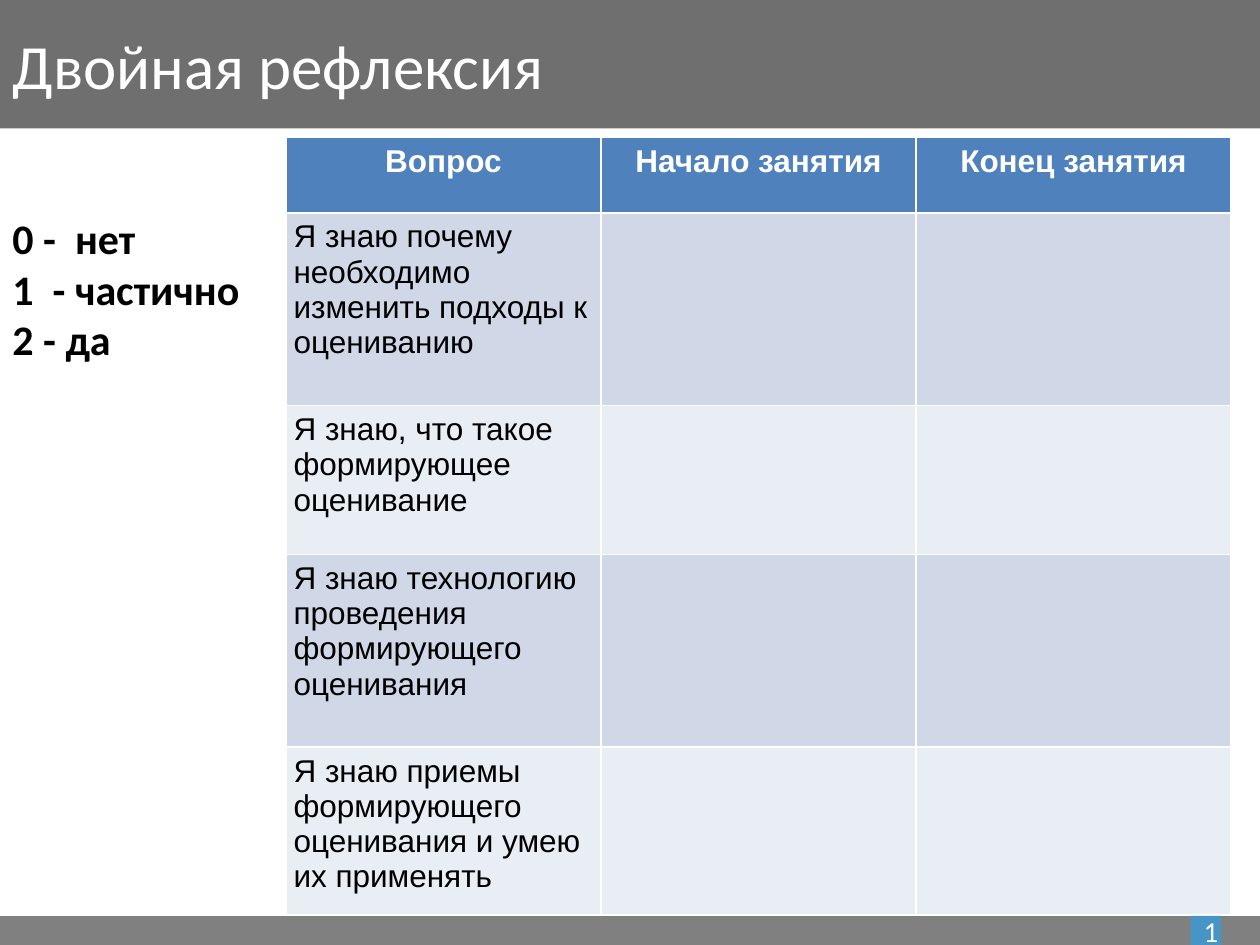
from pptx import Presentation
from pptx.dml.color import RGBColor
from pptx.enum import shapes, text
from pptx.util import Inches, Pt

COLORS = {
    "white": "FFFFFF",
    "black": "000000",
    "title": "6F6F6F",
    "footer": "808080",
    "number": "4695C6",
    "header": "4F81BD",
    "band_dark": "D0D8E8",
    "band_light": "E9EDF4",
}
HEADERS = ["Вопрос", "Начало занятия", "Конец занятия"]
QUESTIONS = [
    "Я знаю почему необходимо изменить подходы к оцениванию",
    "Я знаю, что такое формирующее оценивание",
    "Я знаю технологию проведения формирующего оценивания",
    "Я знаю приемы формирующего оценивания и умею их применять",
]
ROW_HEIGHTS = [0.6, 1.53, 1.18, 1.53, 1.33]
SCALE = ["0 -  нет", "1  - частично", "2 - да"]


def rgb(name):
    return RGBColor.from_string(COLORS[name])


def paint(target, color):
    target.fill.solid()
    target.fill.fore_color.rgb = rgb(color)


def add_run(p, content, size, color, font="Calibri", bold=False):
    r = p.add_run()
    r.text = content
    r.font.name = font
    r.font.size = Pt(size)
    r.font.bold = bold
    r.font.color.rgb = rgb(color)


def set_title(s, content):
    sp = s.shapes.title
    sp.left, sp.top, sp.width, sp.height = Inches(0), Inches(0), Inches(10), Inches(1.02)
    paint(sp, "title")
    tf = sp.text_frame
    tf.auto_size = text.MSO_AUTO_SIZE.NONE
    tf.vertical_anchor = text.MSO_ANCHOR.MIDDLE
    p = tf.paragraphs[0]
    p.alignment = text.PP_ALIGN.LEFT
    add_run(p, content, 36, "white")


def add_bar(s, left, top, width, height, color):
    sp = s.shapes.add_shape(shapes.MSO_SHAPE.RECTANGLE, Inches(left), Inches(top),
                            Inches(width), Inches(height))
    sp.shadow.inherit = False
    sp.line.fill.background()
    paint(sp, color)
    return sp


def add_page_number(s, number):
    tf = add_bar(s, 9.45, 7.27, 0.24, 0.24, "number").text_frame
    tf.margin_left = Inches(0.08)
    tf.margin_right = tf.margin_top = tf.margin_bottom = 0
    tf.word_wrap = False
    tf.vertical_anchor = text.MSO_ANCHOR.MIDDLE
    p = tf.paragraphs[0]
    p.alignment = text.PP_ALIGN.CENTER
    add_run(p, number, 16.5, "white")


def format_cell(cell, color):
    paint(cell, color)
    cell.margin_left = cell.margin_right = Inches(0.06)
    cell.margin_top = cell.margin_bottom = Inches(0.05)


def add_question_table(s):
    table = s.shapes.add_table(len(ROW_HEIGHTS), len(HEADERS), Inches(2.27), Inches(1.09),
                               Inches(7.5), Inches(sum(ROW_HEIGHTS))).table
    for row, height in zip(table.rows, ROW_HEIGHTS):
        row.height = Inches(height)
    for cell, header in zip(table.rows[0].cells, HEADERS):
        format_cell(cell, "header")
        p = cell.text_frame.paragraphs[0]
        p.alignment = text.PP_ALIGN.CENTER
        add_run(p, header, 18, "white", "Arial", True)
    for i, question in enumerate(QUESTIONS):
        cells = table.rows[i + 1].cells
        for cell in cells:
            format_cell(cell, "band_light" if i % 2 else "band_dark")
        add_run(cells[0].text_frame.paragraphs[0], question, 18, "black", "Arial")


def add_scale(s):
    tf = s.shapes.add_textbox(Inches(0), Inches(1.64), Inches(2.11), Inches(4.82)).text_frame
    tf.word_wrap = True
    p = tf.paragraphs[0]
    p.space_before = Pt(4.8)
    for i, line in enumerate(SCALE):
        if i:
            p.add_line_break()
        add_run(p, line, 24, "black", bold=True)


def main():
    prs = Presentation()
    prs.slide_width, prs.slide_height = Inches(10), Inches(7.5)
    s = prs.slides.add_slide(prs.slide_layouts[5])
    set_title(s, "Двойная рефлексия")
    add_bar(s, 0, 7.27, 10, 0.28, "footer")
    add_page_number(s, "1")
    add_question_table(s)
    add_scale(s)
    prs.save("out.pptx")


if __name__ == "__main__":
    main()
